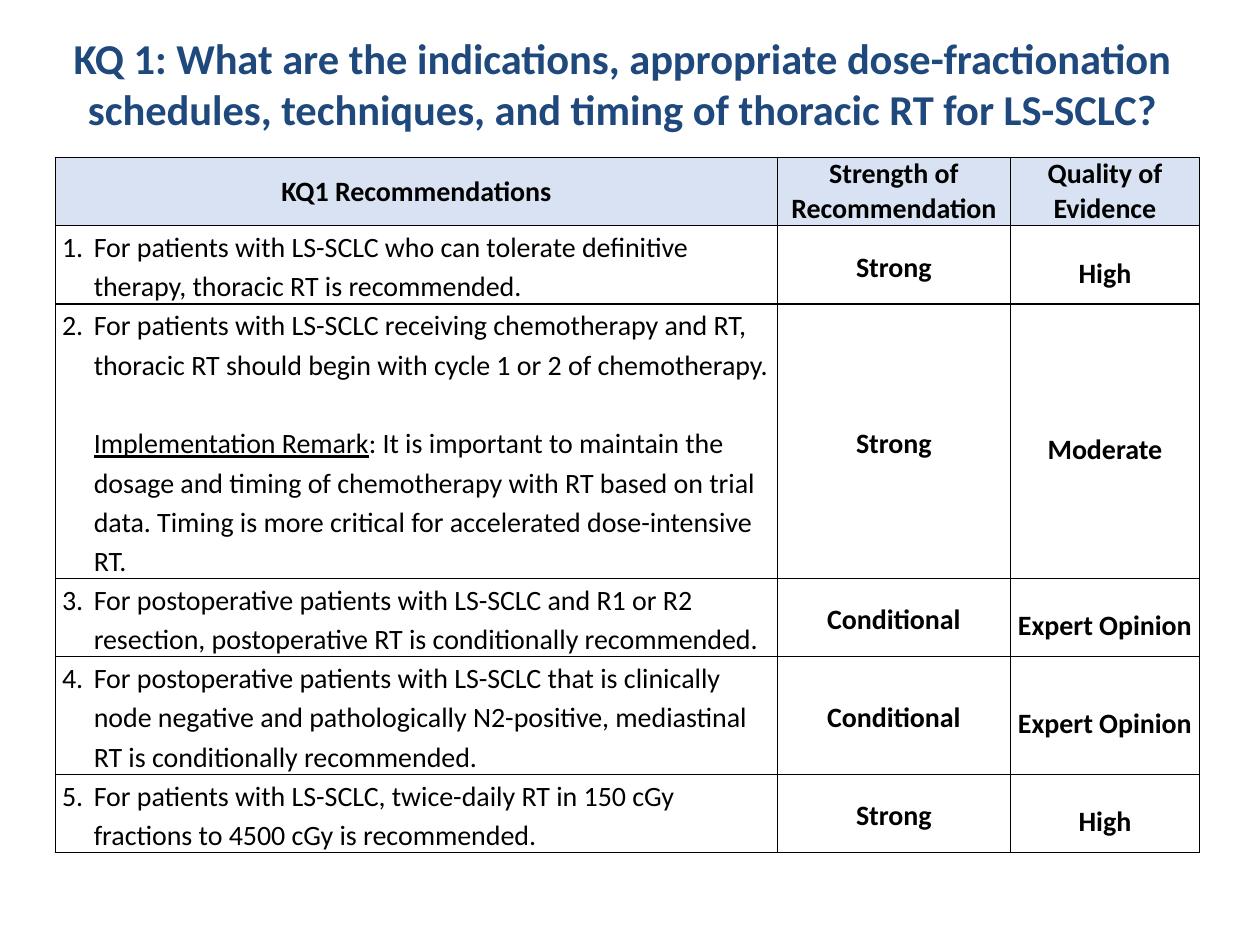
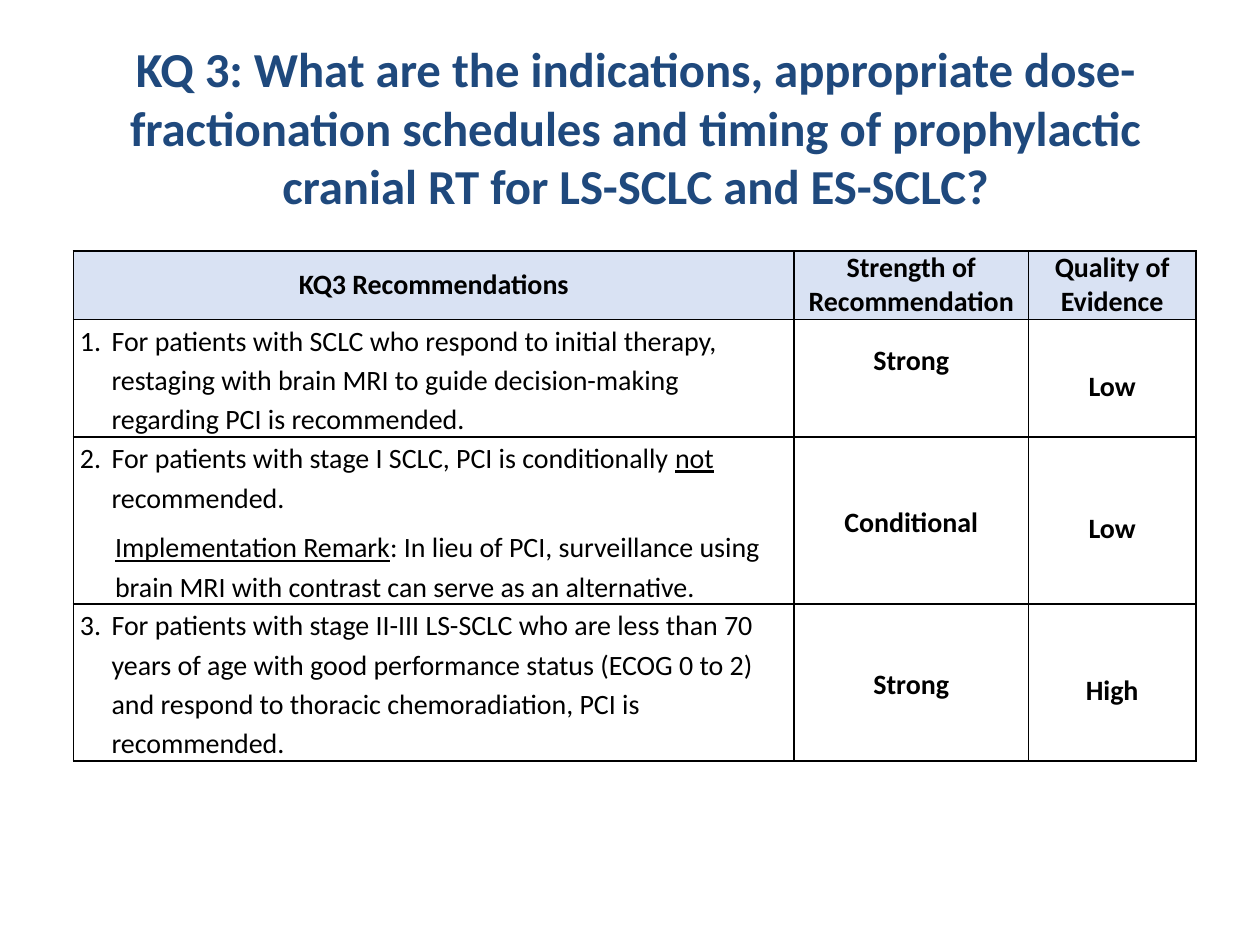
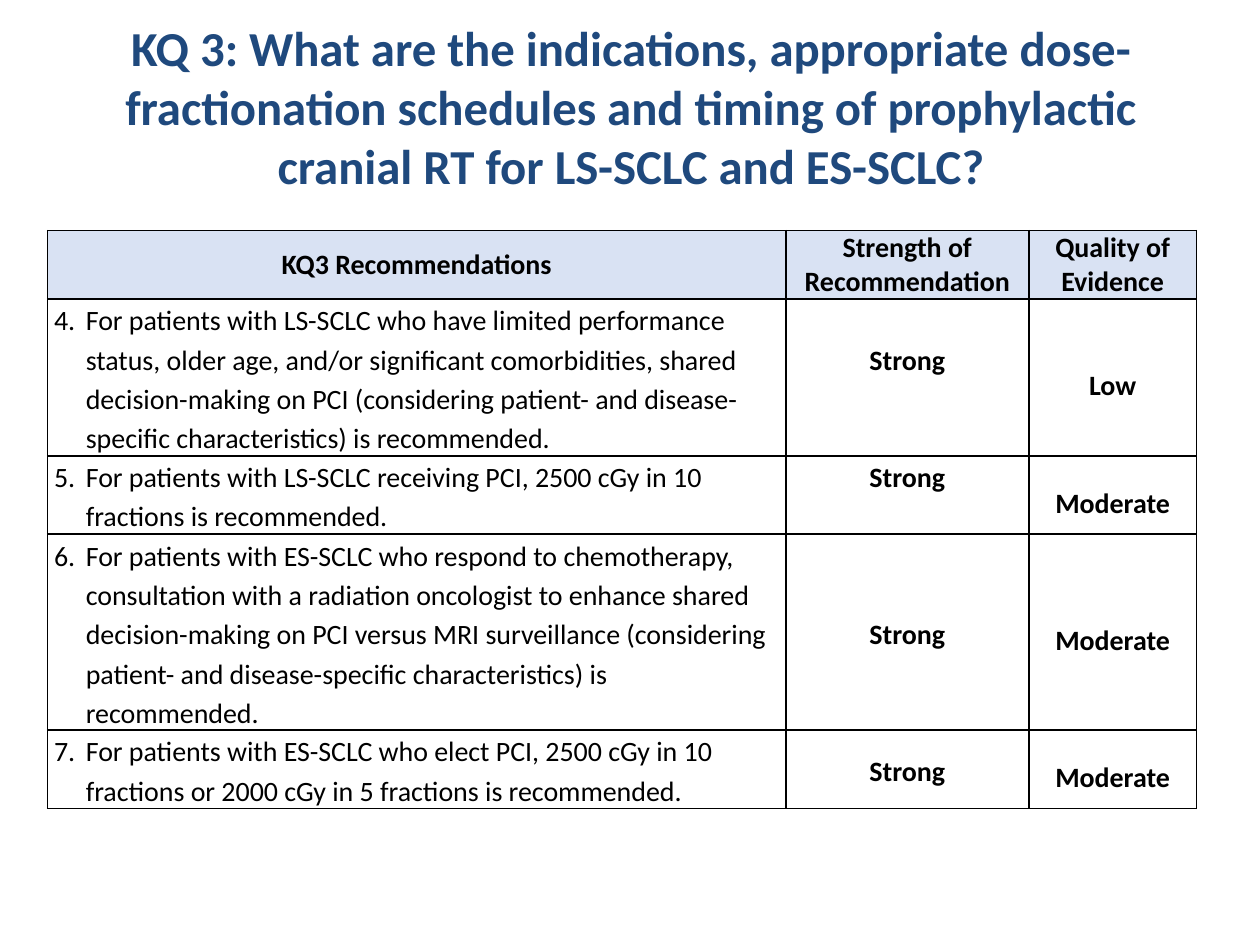
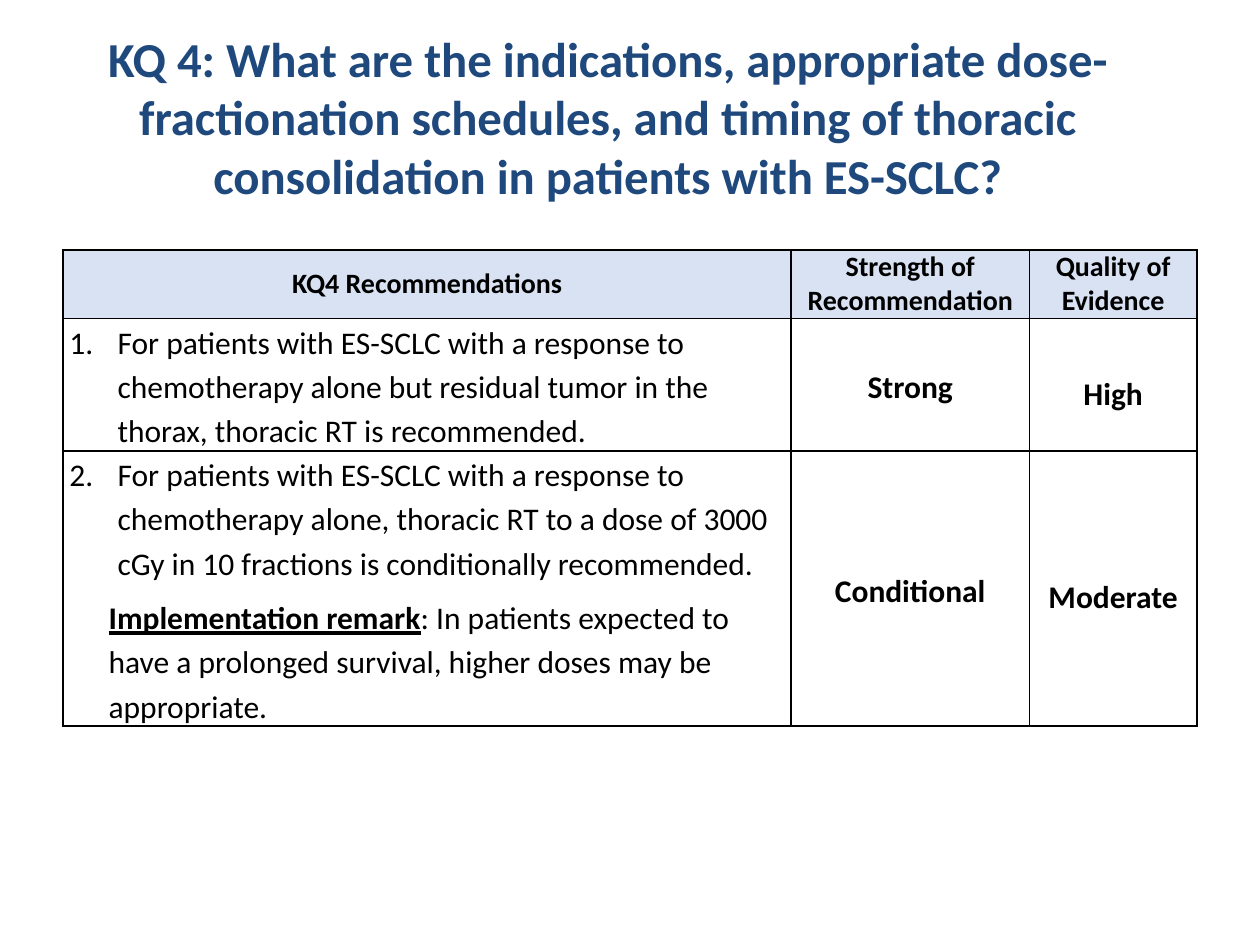
from pptx import Presentation
from pptx import util as u
from pptx.dml import color
from pptx.enum import text
from pptx.oxml import ns
from lxml import etree

# Shared look
FACE, NAVY, BLACK, PALE = "Calibri", "1F497D", "000000", "D9E2F3"
LINE = 1.15              # line spacing of the body text
HEAD = 1.38              # header row height, cm
STEP = {16: 0.79, 18: 0.89}   # height of one body line by text size, cm
MID = text.MSO_ANCHOR.MIDDLE
TOP = text.MSO_ANCHOR.TOP
MARK = {"underline": True}
BOLD = {"bold": True}


def rgb(code):
    return color.RGBColor.from_string(code)


def apply(item, form):
    for key, value in form.items():
        setattr(item, key, value)


def pad(item, side, low=0):
    apply(item, {"margin_left": u.Cm(side), "margin_right": u.Cm(side),
                 "margin_top": 0, "margin_bottom": u.Cm(low)})


def write(para, runs, size, tint=BLACK, bold=False, **form):
    """Fill a paragraph with (words, marks) runs."""
    apply(para, form)
    for words, marks in runs:
        run = para.add_run()
        run.text = words
        apply(run.font, {"name": FACE, "size": u.Pt(size), "bold": bold, **marks})
        run.font.color.rgb = rgb(tint)


def indent(para, left, start=None):
    """Indent a paragraph; with a start it hangs from its number."""
    props = para._p.get_or_add_pPr()
    props.set("marL", str(u.Cm(left)))
    if start:
        props.set("indent", str(-u.Cm(left)))
        etree.SubElement(props, ns.qn("a:buAutoNum"),
                         type="arabicPeriod", startAt=str(start))


def border(cell):
    props = cell._tc.get_or_add_tcPr()
    for spot, side in enumerate(("lnL", "lnR", "lnT", "lnB")):
        line = etree.Element(ns.qn("a:" + side), w=str(u.Pt(1)))
        fill = etree.SubElement(line, ns.qn("a:solidFill"))
        etree.SubElement(fill, ns.qn("a:srgbClr"), val=BLACK)
        props.insert(spot, line)


def title(slide, box, words, size):
    shape = slide.shapes.add_textbox(*map(u.Cm, box))
    frame = shape.text_frame
    apply(frame, {"word_wrap": True, "vertical_anchor": TOP})
    write(frame.paragraphs[0], [(words, BOLD)], size, NAVY,
          alignment=text.PP_ALIGN.CENTER)


def header(cells, label):
    names = (label, "Strength of Recommendation", "Quality of Evidence")
    for cell, name in zip(cells, names):
        cell.fill.solid()
        cell.fill.fore_color.rgb = rgb(PALE)
        cell.vertical_anchor = MID
        pad(cell, 0.18)
        write(cell.text_frame.paragraphs[0], [(name, BOLD)], 16,
              alignment=text.PP_ALIGN.CENTER)


def advice(cell, row, number, size, hang, inset):
    """The numbered recommendation and its remark, if any."""
    cell.vertical_anchor = TOP
    frame = cell.text_frame
    first = frame.paragraphs[0]
    indent(first, hang, number)
    write(first, row["main"], size, line_spacing=LINE,
          space_after=u.Pt(row.get("gap", 0)))
    if "note" in row:
        para = frame.add_paragraph()
        indent(para, inset)
        write(para, row["note"], size, line_spacing=LINE)


def rating(cell, word, size, space):
    cell.vertical_anchor = MID
    write(cell.text_frame.paragraphs[0], [(word, BOLD)], size,
          alignment=text.PP_ALIGN.CENTER, line_spacing=space)


def grid(slide, spot, cols, label, rows, first=1, size=16, hang=0.64, inset=0.64):
    """Recommendation table; row heights follow from the line counts."""
    tall = [HEAD] + [row["lines"] * STEP[size] +
                     (0.21 if row.get("gap") == 6 else 0) for row in rows]
    shape = slide.shapes.add_table(len(tall), len(cols), *map(
        u.Cm, (*spot, sum(cols), sum(tall))))
    table = shape.table
    apply(table, {"first_row": False, "horz_banding": False})
    for col, wide in zip(table.columns, cols):
        col.width = u.Cm(wide)
    for line, high in zip(table.rows, tall):
        line.height = u.Cm(high)

    header(table.rows[0].cells, label)
    for spot, row in enumerate(rows):
        cells = list(table.rows[spot + 1].cells)
        for cell in cells:
            cell.fill.background()
            pad(cell, 0.13)
        advice(cells[0], row, first + spot, size, hang, inset)
        rating(cells[1], row["grade"], size, LINE)
        rating(cells[2], row["proof"], size, 1.5)
        if row.get("lift"):          # grade sits half a line higher
            pad(cells[1], 0.13, STEP[size])
    for cell in table.iter_cells():
        border(cell)


def item(lines, main, grade, proof, **more):
    runs = [(main, {})] if isinstance(main, str) else main
    return {"lines": lines, "main": runs, "grade": grade, "proof": proof, **more}


# Wording
CRANIAL = ("KQ 3: What are the indications, appropriate dose-fractionation schedules "
           "and timing of prophylactic cranial RT for LS-SCLC and ES-SCLC?")

PAGES = [
    {"title": ((1.12, 0.52, 22.86, 3.6),
               "KQ 1: What are the indications, appropriate dose-fractionation "
               "schedules, techniques, and timing of thoracic RT for LS-SCLC?", 24.3),
     "grid": {"spot": (1.12, 3.17), "cols": (14.55, 4.7, 3.81),
              "label": "KQ1 Recommendations", "rows": [
         item(2, "For patients with LS-SCLC who can tolerate definitive therapy, "
              "thoracic RT is recommended.", "Strong", "High"),
         item(7, "For patients with LS-SCLC receiving chemotherapy and RT, thoracic RT "
              "should begin with cycle 1 or 2 of chemotherapy.", "Strong", "Moderate",
              gap=22.4, note=[
                  ("Implementation Remark", MARK),
                  (": It is important to maintain the dosage and timing of chemotherapy "
                   "with RT based on trial data. Timing is more critical for "
                   "accelerated dose-intensive RT.", {})]),
         item(2, "For postoperative patients with LS-SCLC and R1 or R2 resection, "
              "postoperative RT is conditionally recommended.",
              "Conditional", "Expert Opinion"),
         item(3, "For postoperative patients with LS-SCLC that is clinically node "
              "negative and pathologically N2-positive, mediastinal RT is "
              "conditionally recommended.", "Conditional", "Expert Opinion"),
         item(2, "For patients with LS-SCLC, twice-daily RT in 150 cGy fractions to "
              "4500 cGy is recommended.", "Strong", "High")]}},

    {"title": ((1.17, 0.66, 23.29, 4.62), CRANIAL, 27.9),
     "grid": {"spot": (1.48, 5.06), "cols": (14.53, 4.72, 3.38), "inset": 0.71,
              "label": "KQ3 Recommendations", "rows": [
         item(3, "For patients with SCLC who respond to initial therapy, restaging with "
              "brain MRI to guide decision-making regarding PCI is recommended.",
              "Strong", "Low", lift=True),
         item(4, [("For patients with stage I SCLC, PCI is conditionally ", {}),
                  ("not", MARK), (" recommended.", {})], "Conditional", "Low",
              gap=6, note=[
                  ("Implementation Remark", MARK),
                  (": In lieu of PCI, surveillance using brain MRI with contrast can "
                   "serve as an alternative.", {})]),
         item(4, "For patients with stage II-III LS-SCLC who are less than 70 years of "
              "age with good performance status (ECOG 0 to 2) and respond to thoracic "
              "chemoradiation, PCI is recommended.", "Strong", "High")]}},

    {"title": ((0.97, 0.24, 23.5, 3.81), CRANIAL, 27.9),
     "grid": {"spot": (0.96, 4.65), "cols": (14.88, 4.9, 3.38), "first": 4,
              "label": "KQ3 Recommendations", "rows": [
         item(4, "For patients with LS-SCLC who have limited performance status, older "
              "age, and/or significant comorbidities, shared decision-making on PCI "
              "(considering patient- and disease-specific characteristics) is "
              "recommended.", "Strong", "Low", lift=True),
         item(2, "For patients with LS-SCLC receiving PCI, 2500 cGy in 10 fractions is "
              "recommended.", "Strong", "Moderate", lift=True),
         item(5, "For patients with ES-SCLC who respond to chemotherapy, consultation "
              "with a radiation oncologist to enhance shared decision-making on PCI "
              "versus MRI surveillance (considering patient- and disease-specific "
              "characteristics) is recommended.", "Strong", "Moderate"),
         item(2, "For patients with ES-SCLC who elect PCI, 2500 cGy in 10 fractions or "
              "2000 cGy in 5 fractions is recommended.", "Strong", "Moderate")]}},

    {"title": ((0.38, 0.45, 23.75, 4.62),
               "KQ 4: What are the indications, appropriate dose-fractionation "
               "schedules, and timing of thoracic consolidation in patients with "
               "ES-SCLC?", 27.9),
     "grid": {"spot": (1.27, 5.04), "cols": (14.68, 4.8, 3.38), "size": 18,
              "hang": 0.97, "inset": 0.79, "label": "KQ4 Recommendations", "rows": [
         item(3, "For patients with ES-SCLC with a response to chemotherapy alone but "
              "residual tumor in the thorax, thoracic RT is recommended.",
              "Strong", "High"),
         item(6, "For patients with ES-SCLC with a response to chemotherapy alone, "
              "thoracic RT to a dose of 3000 cGy in 10 fractions is conditionally "
              "recommended.", "Conditional", "Moderate", gap=6, note=[
                  ("Implementation remark", {**BOLD, **MARK}),
                  (": In patients expected to have a prolonged survival, higher doses "
                   "may be appropriate.", {})])]}},
]


def main():
    deck = Presentation()
    apply(deck, {"slide_width": u.Cm(25.4), "slide_height": u.Cm(19.05)})
    for page in PAGES:
        slide = deck.slides.add_slide(deck.slide_layouts[6])
        title(slide, *page["title"])
        grid(slide, **page["grid"])
    deck.save("out.pptx")


if __name__ == "__main__":
    main()
